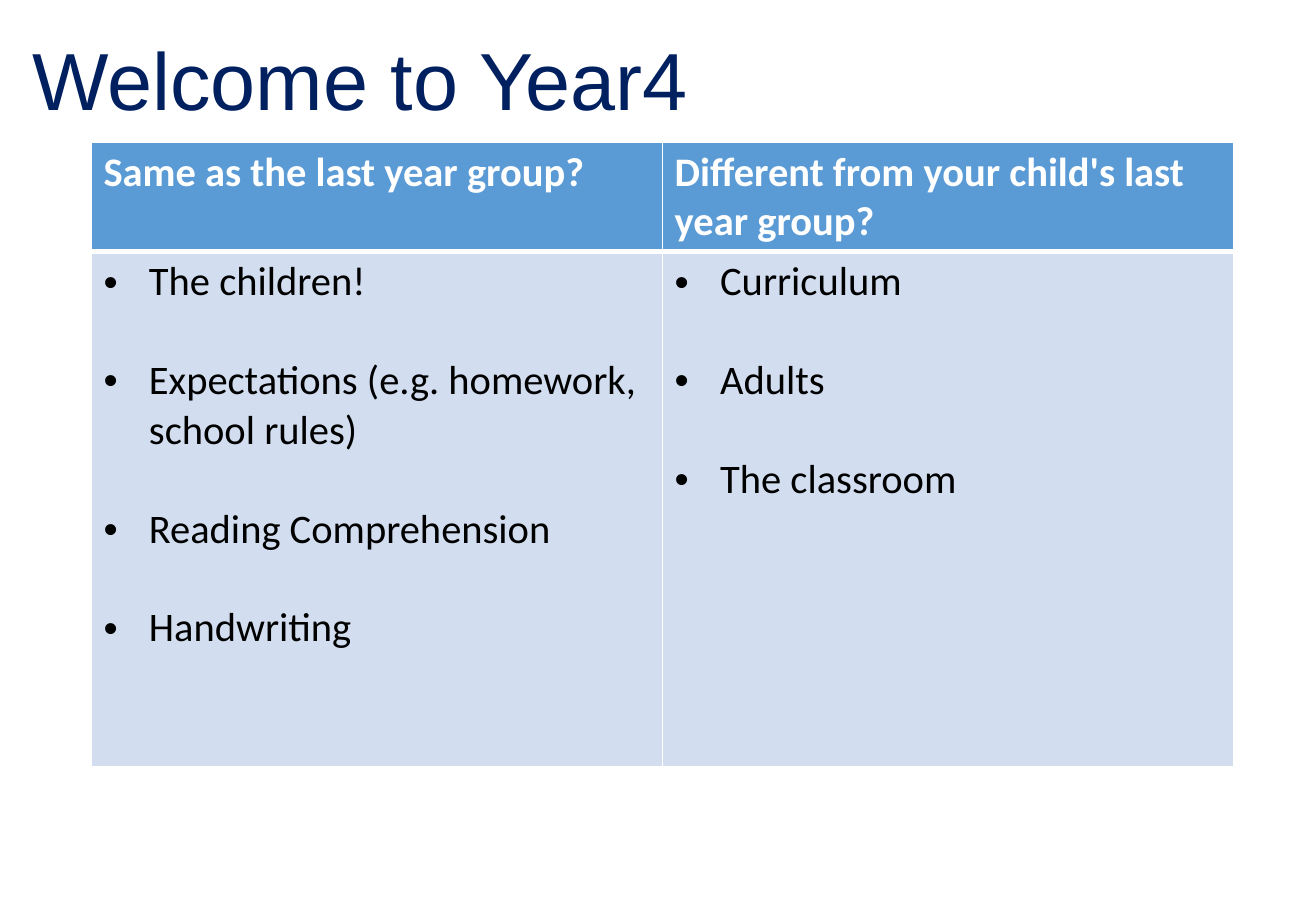
import pptx
import pptx.util
import pptx.dml.color
import pptx.oxml.ns
from lxml import etree

Cm = pptx.util.Cm
Pt = pptx.util.Pt

TITLE = "Welcome to Year4"
COLUMNS = [
    ("Same as the last year group?",
     ["The children!", "Expectations (e.g. homework, school rules)",
      "Reading Comprehension", "Handwriting"]),
    ("Different from your child's last year group?",
     ["Curriculum", "Adults", "The classroom"]),
]
COLORS = {"title": "002060", "header": "5B9BD5", "body": "D2DEEF",
          "white": "FFFFFF", "black": "000000"}
COLUMN_WIDTH = Cm(11.94)
ROW_HEIGHTS = [Cm(2.16), Cm(10.77)]
INDENT = Cm(0.95)
ITEM_GAP = Pt(29.3)


def color(name):
    return pptx.dml.color.RGBColor.from_string(COLORS[name])


def add_element(parent, tag, **attributes):
    return etree.SubElement(parent, pptx.oxml.ns.qn(tag), attributes)


def style_text(para, size, font, color_name, bold=False):
    for span in para.runs:
        span.font.size = Pt(size)
        span.font.name = font
        span.font.bold = bold
        span.font.color.rgb = color(color_name)


def style_cell(cell, fill_name, top, bottom):
    properties = cell._tc.get_or_add_tcPr()
    for side, width in (("L", 1), ("R", 1), ("T", top), ("B", bottom)):
        line = add_element(properties, f"a:ln{side}", w=str(Pt(width)))
        fill = add_element(line, "a:solidFill")
        add_element(fill, "a:srgbClr", val=COLORS["white"])
    cell.fill.solid()
    cell.fill.fore_color.rgb = color(fill_name)


def add_bullet(para):
    properties = para._p.get_or_add_pPr()
    properties.set("marL", str(INDENT))
    properties.set("indent", str(-INDENT))
    add_element(properties, "a:buFont", typeface="Arial")
    add_element(properties, "a:buChar", char="•")


def add_title(page):
    box = page.shapes.add_textbox(Cm(0.43), Cm(0.33), Cm(22.23), Cm(2.31))
    frame = box.text_frame
    frame.word_wrap = True
    frame.margin_top = Cm(0.28)
    frame.text = TITLE
    style_text(frame.paragraphs[0], 48, "Arial", "title")


def add_comparison(page):
    count = len(COLUMNS)
    table = page.shapes.add_table(2, count, Cm(1.91), Cm(2.97),
                                  COLUMN_WIDTH * count, sum(ROW_HEIGHTS)).table
    for row, height in zip(table.rows, ROW_HEIGHTS):
        row.height = height
    for index, (heading, items) in enumerate(COLUMNS):
        table.columns[index].width = COLUMN_WIDTH
        header, body = table.cell(0, index), table.cell(1, index)
        header.text_frame.text = heading
        style_text(header.text_frame.paragraphs[0], 24, "Calibri", "white", True)
        style_cell(header, "header", 1, 3)
        body.text_frame.text = "\n".join(items)
        for position, para in enumerate(body.text_frame.paragraphs):
            if position:
                para.space_before = ITEM_GAP
            add_bullet(para)
            style_text(para, 24, "Calibri", "black")
        style_cell(body, "body", 3, 1)


def main():
    deck = pptx.Presentation()
    deck.slide_width, deck.slide_height = Cm(27.51), Cm(19.05)
    page = deck.slides.add_slide(deck.slide_layouts[6])
    add_title(page)
    add_comparison(page)
    deck.save("out.pptx")


if __name__ == "__main__":
    main()
